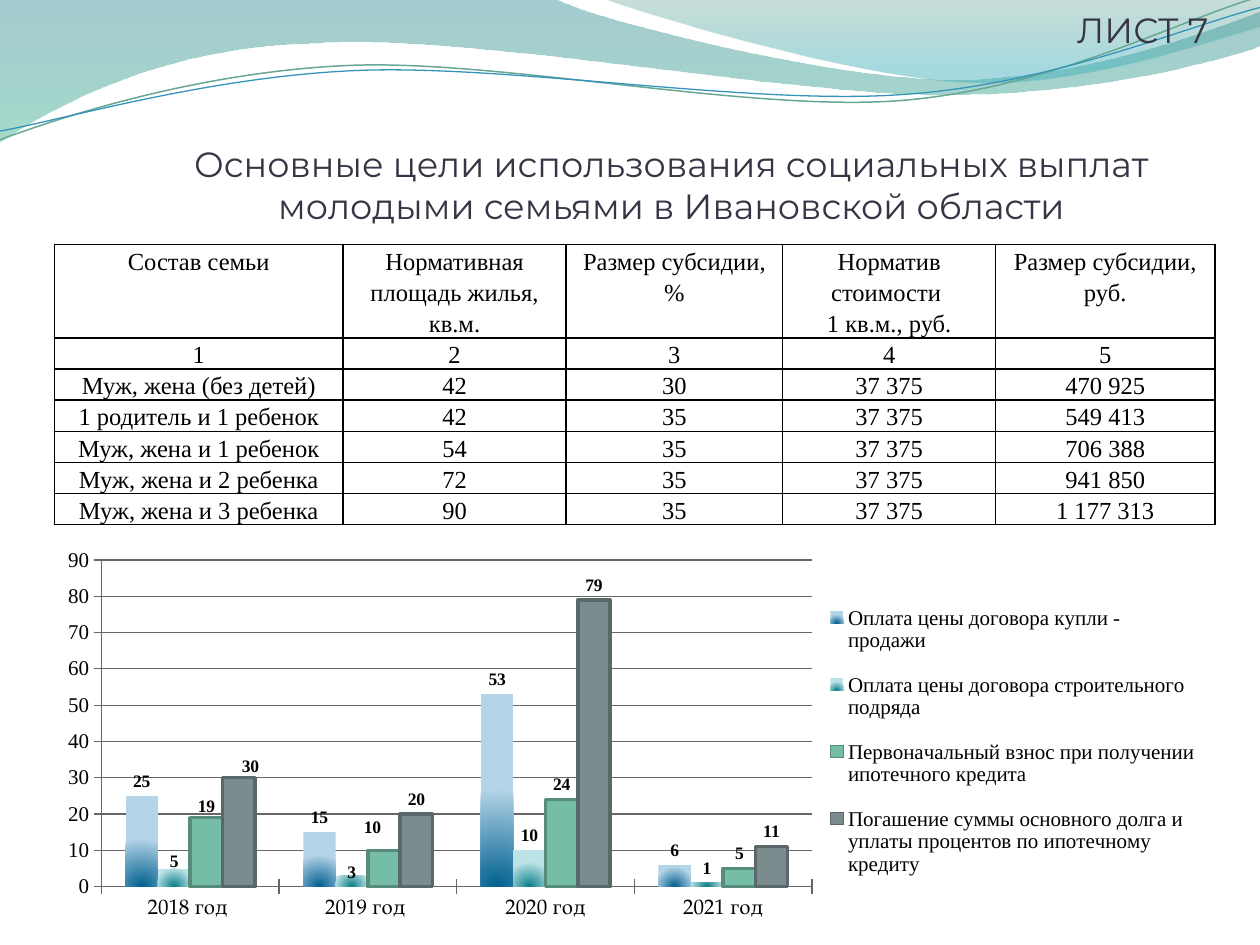
import math

import lxml.etree
import pptx
import pptx.chart.data
import pptx.dml.color
import pptx.enum.chart
import pptx.enum.text
import pptx.oxml.ns
import pptx.util

color = pptx.dml.color.RGBColor.from_string
qn = pptx.oxml.ns.qn
add_element = lxml.etree.SubElement
Pt = pptx.util.Pt
SERIF = "Times New Roman"


def write_text(frame, text, font="Montserrat", size=20, ink="373545", spacing=1.0,
               anchor=pptx.enum.text.MSO_ANCHOR.BOTTOM, margins=(0, 0.05, 0, 0)):
    frame.word_wrap = True
    frame.vertical_anchor = anchor
    frame.margin_left, frame.margin_top, frame.margin_right, frame.margin_bottom = map(
        pptx.util.Inches, margins)
    frame.text = text
    paragraph = frame.paragraphs[0]
    paragraph.alignment = pptx.enum.text.PP_ALIGN.CENTER
    paragraph.line_spacing = spacing
    for line_break in paragraph._p.findall(qn("a:br")):
        add_element(line_break, qn("a:rPr"), sz=str(size * 100))
    for run in paragraph.runs:
        run.font.name, run.font.size = font, Pt(size)
        run.font.color.rgb = color(ink)


def turn(point, center, degrees):
    """Turn a point clockwise about a center."""
    angle = math.radians(degrees)
    x, y = point[0] - center[0], point[1] - center[1]
    return (center[0] + x * math.cos(angle) - y * math.sin(angle),
            center[1] + x * math.sin(angle) + y * math.cos(angle))


presentation = pptx.Presentation()
presentation.slide_width = pptx.util.Inches(10)
presentation.slide_height = pptx.util.Inches(7.5)
slide = presentation.slides.add_slide(presentation.slide_layouts[5])
shapes = slide.shapes

# A grid of 100 columns by 75 rows of square cells
cell_size = presentation.slide_width // 100
boxes = {
    "title": (8.3, 14.6, 90, 3.4),
    "chart": (3.5, 43, 92.9, 30.7),
    "table": (4.33, 19.4, 92.1, 22),
    "sheet": (81.7, 0.1, 18, 3.9),
}
boxes = {name: [round(cell_size * part) for part in box] for name, box in boxes.items()}

# Start point, segments (2 numbers a line, 6 a curve), tilt, then gradient stops or a line
waves = [
    ((0, 0), [(44, -0.1), (47.6, 1.7, 66.4, 6.3, 75.8, 6.3), (85.3, 6.3, 95.8, 2.6, 100, 0.9),
              (100.1, 3.6), (98.3, 4.4, 87, 7.6, 74.6, 7.5), (62.2, 7.5, 38.2, 2.8, 25.7, 3.4),
              (12.9, 3.6, 4.6, 8.3, -0.1, 11.3)],
     0, [(0, "398D96", 45), (1, "58BD9F", 55)]),
    ((47.9, -0.1), [(50.9, 1.1, 68.2, 6.2, 76.9, 6.5), (85.6, 6.9, 96.1, 3.2, 100, 2.1), (100, 0)],
     0, [(0, "4F947F", 30), (0.8, "3BAFBC", 45)]),
    ((0, 11.1), [(4.8, 9.3, 15.8, 5.7, 27.7, 5.2), (39.5, 4.7, 59.3, 8.9, 71.3, 8),
                 (83.3, 7.1, 93.8, 1.5, 99.8, -0.2)], -2.7, ("67A793", 0.85)),
    ((0, 10.4), [(4.7, 9.6, 16.4, 6.1, 28.3, 5.6), (40.3, 5.1, 59.7, 8.4, 71.7, 7.5),
                 (83.6, 6.7, 94.1, 2.1, 100, 0.6)], -2.7, ("3494BA", 0.75)),
]
for index, (start, segments, tilt, style) in enumerate(waves):
    filled = tilt == 0
    corners = [[turn(point, (50, 5.8), -tilt) for point in zip(segment[::2], segment[1::2])]
               for segment in [start] + segments]
    corners = [[(round(x * 1000), round(y * 1000)) for x, y in points] for points in corners]
    first = corners[0][0]
    builder = shapes.build_freeform(*first, scale=cell_size / 1000)
    builder.add_line_segments([points[-1] for points in corners[1:]], close=filled)
    shape = builder.convert_to_shape()
    outline = next(shape._element.iter(qn("a:path")))
    origin = outline.find(qn("a:moveTo")).find(qn("a:pt"))
    shift_x, shift_y = int(origin.get("x")) - first[0], int(origin.get("y")) - first[1]
    for line, points in zip(outline.findall(qn("a:lnTo")), corners[1:]):
        if len(points) == 3:
            curve = lxml.etree.Element(qn("a:cubicBezTo"))
            for x, y in points:
                add_element(curve, qn("a:pt"), x=str(x + shift_x), y=str(y + shift_y))
            outline.replace(line, curve)
    shape.shadow.inherit = False
    shape.rotation = tilt % 360
    if filled:
        shape.line.fill.background()
        shape.fill.gradient()
        shape.fill.gradient_angle = 270
        tints = shape._element.spPr.iter(qn("a:gs"))
        for stop, tint, (position, ink, opacity) in zip(shape.fill.gradient_stops, tints, style):
            stop.position, stop.color.rgb = position, color(ink)
            add_element(tint[0], qn("a:alpha"), val=str(opacity * 1000))
    else:
        shape.fill.background()
        shape.line.color.rgb, shape.line.width = color(style[0]), Pt(style[1])
    # The waves belong to the master, behind its placeholders
    shape._element.nvSpPr.cNvPr.set("id", str(100 + index))
    presentation.slide_master.shapes._spTree.insert(2 + index, shape._element)

title = shapes.title
title.left, title.top, title.width, title.height = boxes["title"]
write_text(title.text_frame,
           "Основные цели использования социальных выплат молодыми семьями в Ивановской области")

# Chart: name, values, fill (dark and light for a glow), outline, label shifts by point
series_styles = [
    ("Оплата цены договора купли - продажи", (25, 15, 53, 6),
     ("00608F", "B4D4E8"), None, {}),
    ("Оплата цены договора строительного подряда", (5, 3, 10, 1),
     ("0A7F8A", "BBE3E8"), None, {0: (0, 0.02), 1: (0, 0.03)}),
    ("Первоначальный взнос при получении ипотечного кредита", (19, 10, 24, 5),
     ("75BDA7",), "578C7C", {0: (0, 0.01), 1: (-0.01, -0.02)}),
    ("Погашение суммы основного долга и уплаты процентов по ипотечному кредиту",
     (30, 20, 79, 11), ("7A8C8E",), "5A6869", {0: (0.01, 0.01)}),
]
data = pptx.chart.data.CategoryChartData()
data.categories = ["2018 год ", "2019 год ", "2020 год", "2021 год"]
for name, values, *_ in series_styles:
    data.add_series(name, values)
chart = shapes.add_chart(pptx.enum.chart.XL_CHART_TYPE.COLUMN_CLUSTERED,
                         *boxes["chart"], data).chart
chart.has_title = False
chart.has_legend = True
chart.legend.position = pptx.enum.chart.XL_LEGEND_POSITION.RIGHT
chart.legend.include_in_layout = False
chart.font.name, chart.font.size = "TeX Gyre Pagella", Pt(10)
chart.font.color.rgb = color("000000")
plot = chart.plots[0]
plot.vary_by_categories = False
plot.gap_width, plot.overlap = 150, 0

value_axis = chart.value_axis
value_axis.minimum_scale, value_axis.maximum_scale, value_axis.major_unit = 0, 90, 10
value_axis.major_gridlines.format.line.color.rgb = color("666666")
for axis in (chart.category_axis, value_axis):
    axis.major_tick_mark = pptx.enum.chart.XL_TICK_MARK.CROSS
    axis.format.line.color.rgb = color("666666")
    axis.tick_labels.font.size = Pt(12)
for font in (value_axis.tick_labels.font, chart.legend.font):
    font.name, font.size = SERIF, Pt(12)

layouts = []
for series, (_, _, fills, outline, shifts) in zip(plot.series, series_styles):
    fill = series.format.fill
    if outline:
        fill.solid()
        fill.fore_color.rgb = color(fills[0])
        series.format.line.color.rgb, series.format.line.width = color(outline), Pt(2)
    else:
        fill.gradient()
        for position, (stop, tint) in enumerate(zip(fill.gradient_stops, fills)):
            stop.position, stop.color.rgb = position, color(tint)
        linear = next(series._element.iter(qn("a:lin")))
        glow = lxml.etree.Element(qn("a:path"), path="circle")
        add_element(glow, qn("a:fillToRect"), l="50000", t="100000", r="50000", b="0")
        linear.getparent().replace(linear, glow)
    labels = series.data_labels
    labels.show_value = True
    for label in [labels] + [series.points[index].data_label for index in shifts]:
        label.position = pptx.enum.chart.XL_LABEL_POSITION.OUTSIDE_END
        label.font.name, label.font.size, label.font.bold = SERIF, Pt(10), True
    for leader in series._element.iter(qn("c:showLeaderLines")):
        leader.set("val", "0")
    for element, shift in zip(series._element.iter(qn("c:dLbl")), shifts.values()):
        layouts.append((element, 1, dict(zip("xy", shift))))

plot_area = next(chart._chartSpace.iter(qn("c:plotArea")))
layouts.append((plot_area, 0, dict(layoutTarget="inner", xMode="edge", yMode="edge",
                                   x=4.9 / 100, y=4.7 / 100, w=60.7 / 100, h=84.5 / 100)))
layouts.append((chart.legend._element, 1, dict(xMode="edge", yMode="edge",
                                               x=0.67, y=0.11, w=31.5 / 100, h=0.81)))
for element, index, settings in layouts:
    for previous in element.findall(qn("c:layout")):
        element.remove(previous)
    layout = lxml.etree.Element(qn("c:layout"))
    manual = add_element(layout, qn("c:manualLayout"))
    for name, value in settings.items():
        add_element(manual, qn(f"c:{name}"), val=str(value))
    element.insert(index, layout)

rows = [
    ("Состав семьи", "Нормативная площадь жилья, кв.м.", "Размер субсидии, %",
     "Норматив стоимости \v1 кв.м., руб.", "Размер субсидии, руб."),
    ("1", "2", "3", "4", "5"),
    ("Муж, жена (без детей)", "42", "30", "37 375", "470 925"),
    ("1 родитель и 1 ребенок", "42", "35", "37 375", "549 413"),
    ("Муж, жена и 1 ребенок", "54", "35", "37 375", "706 388"),
    ("Муж, жена и 2 ребенка", "72", "35", "37 375", "941 850"),
    ("Муж, жена и 3 ребенка", "90", "35", "37 375", "1 177 313"),
]
table = shapes.add_table(len(rows), len(rows[0]), *boxes["table"]).table
table.first_row = table.horz_banding = False
for column, width in zip(table.columns, (22.9, 17.7, 17.2, 16.9, 17.4)):
    column.width = round(cell_size * width)
for row_index, texts in enumerate(rows):
    table.rows[row_index].height = round(cell_size * (2.4 if row_index else 7.3))
    for column_index, text in enumerate(texts):
        cell = table.cell(row_index, column_index)
        write_text(cell.text_frame, text, font=SERIF, size=14, ink="000000", spacing=1.15,
                   anchor=pptx.enum.text.MSO_ANCHOR.TOP)
        cell.margin_left = cell.margin_right = pptx.util.Inches(0.07)
        cell.margin_top = cell.margin_bottom = 0
        properties = cell._tc.get_or_add_tcPr()
        for side in ("lnL", "lnR", "lnT", "lnB"):
            border = add_element(properties, qn(f"a:{side}"), w=str(Pt(1)))
            add_element(add_element(border, qn("a:solidFill")), qn("a:srgbClr"), val="000000")
        cell.fill.background()

sheet_label = shapes.add_textbox(*boxes["sheet"])
write_text(sheet_label.text_frame, "ЛИСТ 7")

presentation.save("out.pptx")
